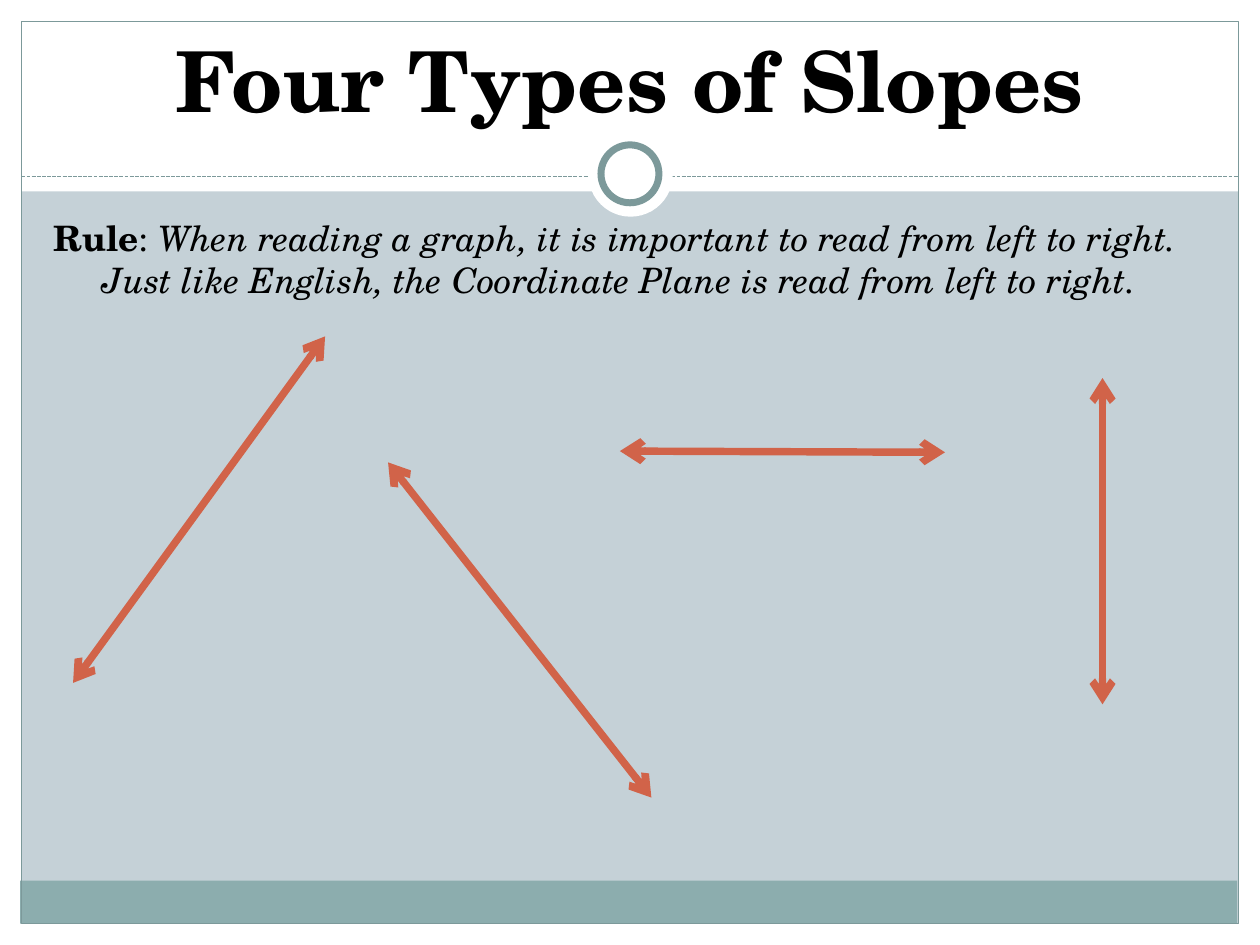
from lxml import etree
from pptx import Presentation
from pptx import util as u
from pptx.dml.color import RGBColor
from pptx.enum import dml, shapes, text
from pptx.oxml.ns import qn

FONT = "TeX Gyre Schola"
COLORS = {
    "back": "C5D1D7",
    "white": "FFFFFF",
    "band": "8CADAE",
    "frame": "7C999A",
    "arrow": "D16349",
    "ink": "000000",
}


def color(name):
    return RGBColor.from_string(COLORS[name])


def add_box(slide, kind, box, fill=None, line=None, width=0.75):
    shape = slide.shapes.add_shape(kind, *map(u.Inches, box))
    shape.shadow.inherit = False
    if fill:
        shape.fill.solid()
        shape.fill.fore_color.rgb = color(fill)
    else:
        shape.fill.background()
    if line:
        shape.line.color.rgb = color(line)
        shape.line.width = u.Pt(width)
    else:
        shape.line.fill.background()


def add_line(parent, start, end, hue, width):
    line = parent.shapes.add_connector(
        shapes.MSO_CONNECTOR.STRAIGHT, *map(u.Inches, start + end))
    line.line.color.rgb = color(hue)
    line.line.width = u.Pt(width)
    etree.SubElement(line._element.spPr, qn("a:effectLst"))
    return line


def add_arrow(parent, start, end):
    line = add_line(parent, start, end, "arrow", 4.25)
    for tag in ("a:headEnd", "a:tailEnd"):
        etree.SubElement(line.line._get_or_add_ln(), qn(tag), type="arrow")


def add_frame(slide):
    rect, oval = shapes.MSO_SHAPE.RECTANGLE, shapes.MSO_SHAPE.OVAL
    # White margins and header
    for box in ((0, 7.33, 10, 0.17), (0, 0, 10, 1.52),
                (0, 0, 0.17, 7.5), (9.83, 0, 0.17, 7.5)):
        add_box(slide, rect, box, "white")
    # Footer band and border
    add_box(slide, rect, (0.16, 6.99, 9.66, 0.34), "band")
    add_box(slide, rect, (0.17, 0.17, 9.66, 7.16), line="frame")
    # Dashed line with ring
    dash = add_line(slide, (0.17, 1.4), (9.83, 1.4), "frame", 0.75)
    dash.line.dash_style = dml.MSO_LINE.SQUARE_DOT
    add_box(slide, oval, (4.67, 1.05, 0.67, 0.67), "white")
    add_box(slide, oval, (4.77, 1.15, 0.46, 0.46), "white", "frame", 4)


def set_font(para, size):
    para.font.name = FONT
    para.font.size = u.Pt(size)
    para.font.color.rgb = color("ink")


def add_title(slide, words):
    title = slide.shapes.title
    title.left, title.top, title.width, title.height = map(
        u.Inches, (0.33, 0.25, 9.33, 0.83))
    frame = title.text_frame
    frame.text = words
    frame.auto_size = text.MSO_AUTO_SIZE.NONE
    frame.vertical_anchor = text.MSO_ANCHOR.BOTTOM
    para = frame.paragraphs[0]
    para.alignment = text.PP_ALIGN.CENTER
    set_font(para, 48)
    para.font.bold = True
    # Keep the title above the frame
    slide.shapes._spTree.append(title._element)


def add_rule(slide, parts):
    box = slide.shapes.add_textbox(*map(u.Inches, (0.33, 1.67, 9.3, 5)))
    box.text_frame.word_wrap = True
    para = box.text_frame.paragraphs[0]
    set_font(para, 20)
    para.space_before = u.Pt(4)
    # Hanging indent
    props = para._p.get_or_add_pPr()
    props.set("marL", str(u.Inches(0.38)))
    props.set("indent", str(u.Inches(-0.38)))
    for words, bold, italic in parts:
        run = para.add_run()
        run.text = words
        run.font.bold, run.font.italic = bold, italic


def main():
    deck = Presentation()
    deck.slide_width, deck.slide_height = u.Inches(10), u.Inches(7.5)
    slide = deck.slides.add_slide(deck.slide_layouts[5])
    slide.background.fill.solid()
    slide.background.fill.fore_color.rgb = color("back")

    add_frame(slide)
    add_title(slide, "Four Types of Slopes")
    add_rule(slide, [
        ("Rule", True, False),
        (": ", False, False),
        ("When reading a graph, it is important to read from left to right. "
         "Just like English, the Coordinate Plane is read from left to right.",
         False, True),
    ])

    # Arrows
    add_arrow(slide, (8.75, 5.59), (8.75, 3))
    group = slide.shapes.add_group_shape()
    for start, end in (((0.58, 5.42), (2.58, 2.67)),
                       ((5.17, 6.33), (3.08, 3.67)),
                       ((4.92, 3.58), (7.5, 3.59))):
        add_arrow(group, start, end)

    deck.save("out.pptx")


if __name__ == "__main__":
    main()
